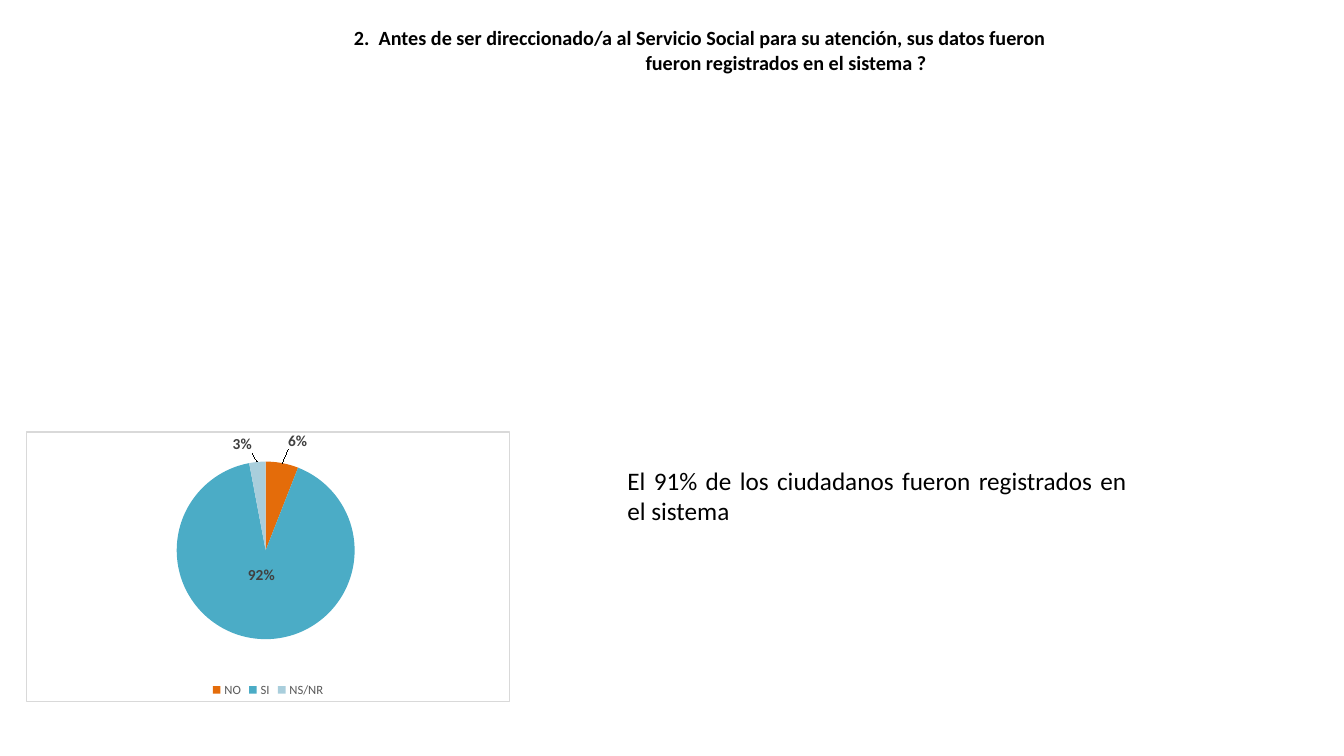
from dataclasses import dataclass

from lxml import etree
from pptx import Presentation
from pptx.chart.data import CategoryChartData
from pptx.dml.color import RGBColor
from pptx.enum.chart import XL_CHART_TYPE, XL_LABEL_POSITION, XL_LEGEND_POSITION
from pptx.enum.text import MSO_ANCHOR, PP_ALIGN
from pptx.oxml import parse_xml
from pptx.oxml.ns import nsdecls, qn
from pptx.util import Pt

PIE = XL_CHART_TYPE.PIE
BOTTOM = XL_LEGEND_POSITION.BOTTOM
CENTER_LABEL = XL_LABEL_POSITION.CENTER
OUTSIDE_LABEL = XL_LABEL_POSITION.OUTSIDE_END
TOP, MIDDLE = MSO_ANCHOR.TOP, MSO_ANCHOR.MIDDLE
CENTER, JUSTIFY = PP_ALIGN.CENTER, PP_ALIGN.JUSTIFY
FONT = "Calibri"
PERCENT_FORMAT = '0"%"'


@dataclass(frozen=True)
class TextBlock:
    lines: tuple[str, ...]
    left: float
    top: float
    width: float
    height: float
    size: float
    bold: bool
    alignment: PP_ALIGN
    anchor: MSO_ANCHOR
    following_indent: float = 0


@dataclass(frozen=True)
class Answer:
    name: str
    percent: int
    color: str
    label_position: XL_LABEL_POSITION
    label_shift: tuple[float, float]


TEXT_BLOCKS = [
    TextBlock(
        (
            "2.  Antes de ser direccionado/a al Servicio Social para su atención, sus datos fueron",
            "fueron registrados en el sistema ?",
        ),
        159, 13.7, 682, 44, 14.4, True, CENTER, MIDDLE, 123,
    ),
    TextBlock(
        ("El 91% de los ciudadanos fueron registrados en el sistema",),
        441, 329, 371, 51, 18, False, JUSTIFY, TOP,
    ),
]

ANSWERS = [
    Answer("NO", 6, "E46C0A", OUTSIDE_LABEL, (0.01, -0.03)),
    Answer("SI", 92, "4BACC6", CENTER_LABEL, (0, -0.07)),
    Answer("NS/NR", 3, "A9CEDC", OUTSIDE_LABEL, (-0.01, -0.01)),
]


def rgb(color: str) -> RGBColor:
    return RGBColor.from_string(color)


def format_font(font, size: float, color: str, bold: bool = False) -> None:
    font.name = FONT
    font.size = Pt(size)
    font.bold = bold
    font.color.rgb = rgb(color)


def add_text(slide, block: TextBlock) -> None:
    shape = slide.shapes.add_textbox(
        Pt(block.left), Pt(block.top), Pt(block.width), Pt(block.height)
    )
    text_frame = shape.text_frame
    text_frame.word_wrap = True
    text_frame.vertical_anchor = block.anchor
    text_frame.text = "\n".join(block.lines)
    for index, paragraph in enumerate(text_frame.paragraphs):
        paragraph.alignment = block.alignment
        if index and block.following_indent:
            properties = paragraph._p.get_or_add_pPr()
            properties.set("marL", str(Pt(block.following_indent)))
        for run in paragraph.runs:
            format_font(run.font, block.size, "000000", block.bold)


def manual_layout(**settings) -> etree._Element:
    layout = parse_xml(f"<c:layout {nsdecls('c')}/>")
    manual = etree.SubElement(layout, qn("c:manualLayout"))
    for name, value in settings.items():
        etree.SubElement(manual, qn(f"c:{name}")).set("val", str(value))
    return layout


def format_answer(point, answer: Answer) -> None:
    point.format.fill.solid()
    point.format.fill.fore_color.rgb = rgb(answer.color)
    label = point.data_label
    format_font(label.font, 11, "404040", True)
    label.position = answer.label_position
    element = label._dLbl
    shift_x, shift_y = answer.label_shift
    number_format = parse_xml(f"<c:numFmt {nsdecls('c')} sourceLinked='0'/>")
    number_format.set("formatCode", PERCENT_FORMAT)
    element.insert(1, manual_layout(x=shift_x, y=shift_y))
    element.insert(2, number_format)


def add_answer_chart(slide) -> None:
    data = CategoryChartData(number_format=PERCENT_FORMAT)
    data.categories = [answer.name for answer in ANSWERS]
    data.add_series("Series 1", [answer.percent for answer in ANSWERS])
    chart = slide.shapes.add_chart(
        PIE, Pt(18.7), Pt(308.2), Pt(345.6), Pt(193), data
    ).chart
    chart.has_title = False
    format_font(chart.font, 10, "000000")
    chart.has_legend = True
    chart.legend.position = BOTTOM
    chart.legend.include_in_layout = False
    format_font(chart.legend.font, 9, "595959")

    plot = chart.plots[0]
    plot.vary_by_categories = True
    for index, answer in enumerate(ANSWERS):
        format_answer(plot.series[0].points[index], answer)

    plot_area = chart._chartSpace.chart.plotArea
    for layout in plot_area.findall(qn("c:layout")):
        plot_area.remove(layout)
    plot_area.insert(0, manual_layout(
        layoutTarget="inner", xMode="edge", yMode="edge",
        x=0.09, y=0.11, w=0.81, h=0.66,
    ))
    frame = parse_xml(
        f"<c:spPr {nsdecls('c', 'a')}>"
        '<a:solidFill><a:srgbClr val="FFFFFF"/></a:solidFill>'
        f'<a:ln w="{Pt(0.75)}"><a:solidFill><a:srgbClr val="D9D9D9"/></a:solidFill></a:ln>'
        "</c:spPr>"
    )
    chart._chartSpace.chart.addnext(frame)


def main() -> None:
    presentation = Presentation()
    presentation.slide_width = Pt(960)
    presentation.slide_height = Pt(540)
    slide = presentation.slides.add_slide(presentation.slide_layouts[6])
    title, conclusion = TEXT_BLOCKS
    add_text(slide, title)
    add_answer_chart(slide)
    add_text(slide, conclusion)
    presentation.save("out.pptx")


if __name__ == "__main__":
    main()
